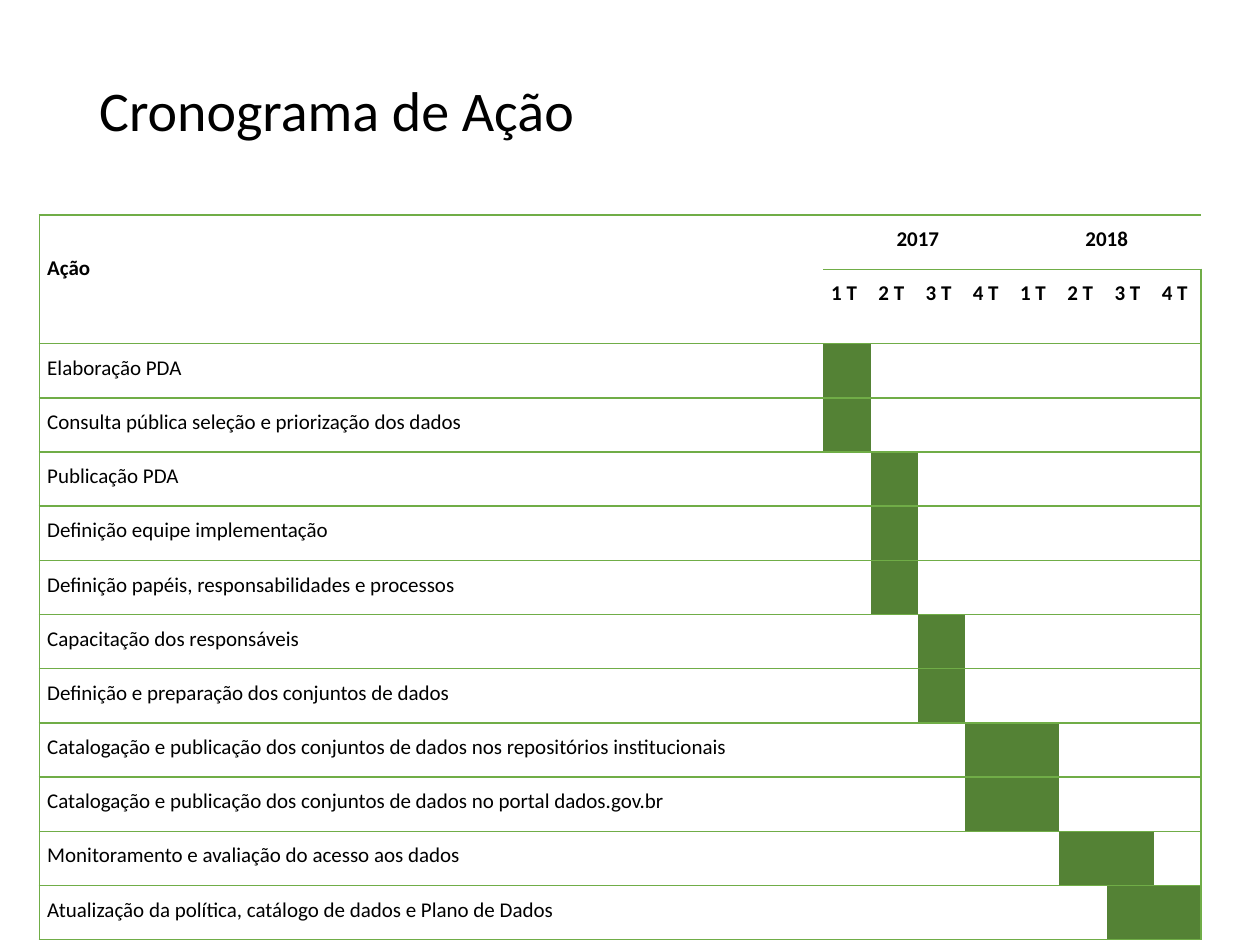
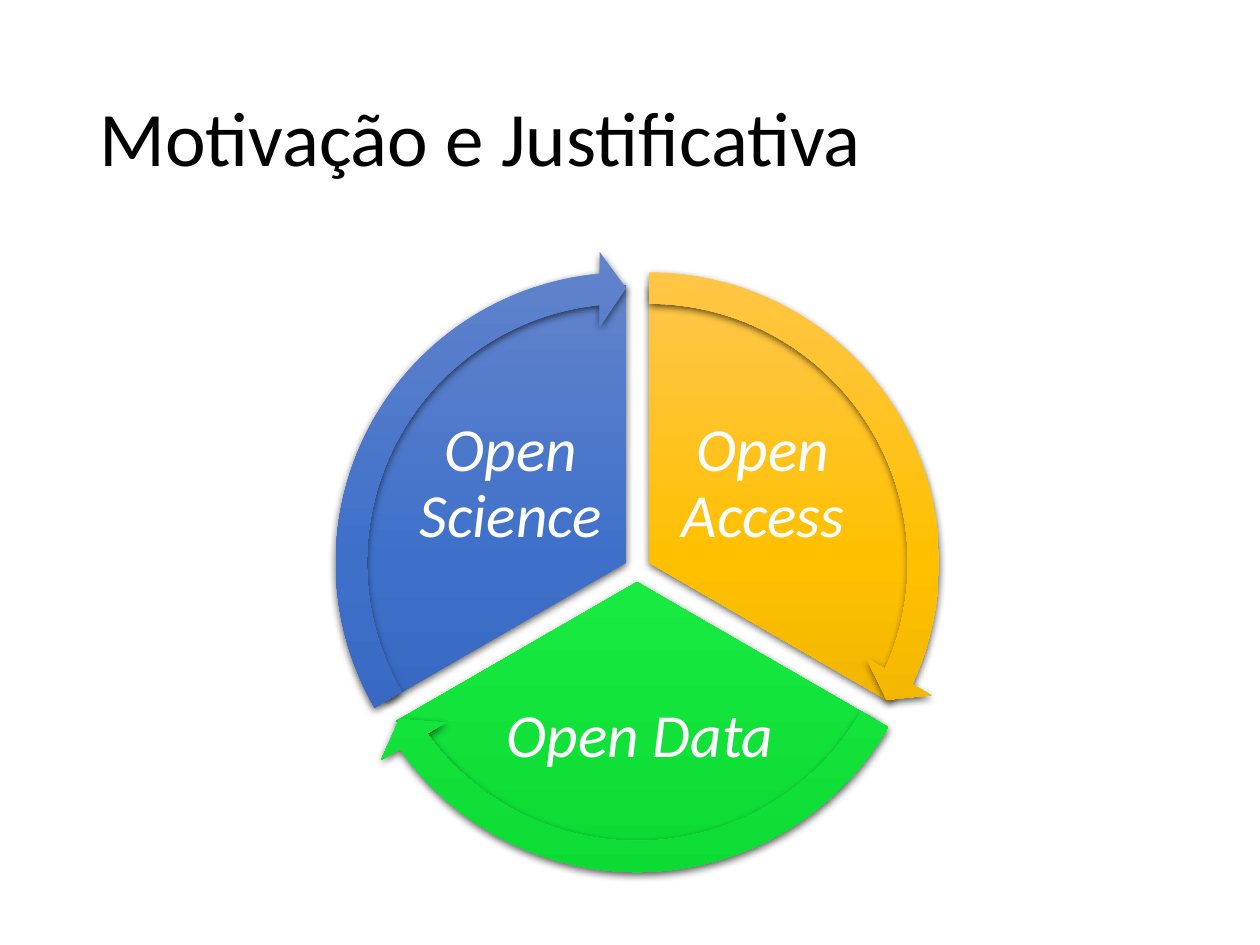
"""Build a two-slide deck: an action schedule table and an open-science cycle."""
from copy import deepcopy
from dataclasses import dataclass

from lxml import etree
from pptx import Presentation
from pptx import util as u
from pptx.dml.color import RGBColor
from pptx.enum import shapes, text
from pptx.oxml import ns

Pt = u.Pt
FONT = "Calibri"
BLACK = RGBColor(0x00, 0x00, 0x00)
WHITE = RGBColor(0xFF, 0xFF, 0xFF)
GREEN_LINE = RGBColor(0x70, 0xAD, 0x47)
GREEN_BAR = RGBColor(0x54, 0x82, 0x35)
ORANGE = (RGBColor(0xFF, 0xC6, 0x4B), RGBColor(0xFF, 0xC0, 0x00), RGBColor(0xE3, 0xAB, 0x00))
LIME = (RGBColor(0x51, 0xE6, 0x63), RGBColor(0x19, 0xEA, 0x42), RGBColor(0x0C, 0xDB, 0x34))
BLUE = (RGBColor(0x61, 0x83, 0xCB), RGBColor(0x3E, 0x70, 0xCA), RGBColor(0x30, 0x62, 0xBB))

NO_STYLE = "{2D5ABB26-0587-4C30-8999-92F81FD0307C}"
QUARTERS = 8
HEADER_ROWS = 2
CELL_MARGIN = 4.5
ROW_HEIGHT = 30.95
PIE_SIZE = 317.5
ARROW_SIZE = 356.4


@dataclass
class Action:
    name: str
    first: int
    count: int = 1


@dataclass
class Sector:
    label: str
    colors: tuple
    center: tuple
    start: float
    end: float
    arrow_start: float
    arrow_end: float
    label_box: tuple


ACTIONS = [
    Action("Elaboração PDA", 1),
    Action("Consulta pública seleção e priorização dos dados", 1),
    Action("Publicação PDA", 2),
    Action("Definição equipe implementação", 2),
    Action("Definição papéis, responsabilidades e processos", 2),
    Action("Capacitação dos responsáveis", 3),
    Action("Definição e preparação dos conjuntos de dados", 3),
    Action("Catalogação e publicação dos conjuntos de dados nos repositórios institucionais", 4, 2),
    Action("Catalogação e publicação dos conjuntos de dados no portal dados.gov.br", 4, 2),
    Action("Monitoramento e avaliação do acesso aos dados", 6, 2),
    Action("Atualização da política, catálogo de dados e Plano de Dados", 7, 2),
]

SECTORS = [
    Sector("Open Access", ORANGE, (370.9, 321.5), 162, 18, 161.99, 14.72, (379.5, 229.7, 113, 94.3)),
    Sector("Open Data", LIME, (364, 332.6), 18, 90, 18, 86.72, (280.8, 380.2, 170, 82.8)),
    Sector("Open Science", BLUE, (357.6, 321.5), 90, 162, 90, 158.73, (235.5, 229.7, 113, 94.3)),
]


def add_run(p, words: str, size: float, color: RGBColor, bold: bool = False, italic: bool = False) -> None:
    r = p.add_run()
    r.text = words
    r.font.name = FONT
    r.font.size = Pt(size)
    r.font.color.rgb = color
    r.font.bold = bold
    r.font.italic = italic


def add_titled_slide(prs, title: str, size: float, height: float):
    s = prs.slides.add_slide(prs.slide_layouts[5])
    sp = s.shapes.title
    sp.left, sp.top, sp.width, sp.height = Pt(49.5), Pt(28.8), Pt(621), Pt(height)
    tf = sp.text_frame
    tf.auto_size = text.MSO_AUTO_SIZE.NONE
    tf.vertical_anchor = text.MSO_ANCHOR.MIDDLE
    p = tf.paragraphs[0]
    p.alignment = text.PP_ALIGN.LEFT
    p.line_spacing = 0.9
    add_run(p, title, size, BLACK)
    return s


def set_borders(cell, sides: str) -> None:
    tc_pr = cell._tc.get_or_add_tcPr()
    for side in "LRTB":
        ln = etree.SubElement(tc_pr, ns.qn(f"a:ln{side}"), w=str(Pt(1)))
        if side in sides:
            fill = etree.SubElement(ln, ns.qn("a:solidFill"))
            etree.SubElement(fill, ns.qn("a:srgbClr"), val=str(GREEN_LINE))
        else:
            ln.set("w", "0")
            etree.SubElement(ln, ns.qn("a:noFill"))


def write_cell(cell, words: str, bold: bool = False, centered: bool = False) -> None:
    p = cell.text_frame.paragraphs[0]
    p.line_spacing = 1.15
    p.alignment = text.PP_ALIGN.CENTER if centered else text.PP_ALIGN.LEFT
    add_run(p, words, 12, BLACK, bold=bold)


def format_cell(table, row: int, col: int) -> None:
    cell = table.cell(row, col)
    cell.margin_left = cell.margin_right = Pt(CELL_MARGIN)
    cell.margin_top = cell.margin_bottom = Pt(CELL_MARGIN)
    sides = "B" if (row, col) == (1, 0) else "TB"
    if col == 0:
        sides += "L"
    if col == QUARTERS:
        sides += "R"
    set_borders(cell, sides)
    cell.fill.solid()
    cell.fill.fore_color.rgb = WHITE


def add_schedule(s) -> None:
    rows = HEADER_ROWS + len(ACTIONS)
    frame = s.shapes.add_table(rows, QUARTERS + 1, Pt(22.5), Pt(123), Pt(664), Pt(rows * ROW_HEIGHT))
    table = frame.table
    table._tbl.tblPr.find(ns.qn("a:tableStyleId")).text = NO_STYLE
    table.first_row = table.horz_banding = False
    for i, col in enumerate(table.columns):
        col.width = Pt(27 if i else 448)
    for i, row in enumerate(table.rows):
        row.height = Pt(42.5 if i == 1 else ROW_HEIGHT)
        for j in range(QUARTERS + 1):
            format_cell(table, i, j)

    heading = table.cell(0, 0)
    heading.merge(table.cell(1, 0))
    heading.margin_top = Pt(21)
    write_cell(heading, "Ação", bold=True)
    for year, col in (("2017", 1), ("2018", 5)):
        table.cell(0, col).merge(table.cell(0, col + 3))
        write_cell(table.cell(0, col), year, bold=True, centered=True)
    for q in range(QUARTERS):
        write_cell(table.cell(1, q + 1), f"{q % 4 + 1} T", bold=True)

    for i, action in enumerate(ACTIONS, HEADER_ROWS):
        write_cell(table.cell(i, 0), action.name)
        for col in range(action.first, action.first + action.count):
            table.cell(i, col).fill.fore_color.rgb = GREEN_BAR


def add_shadow(sp) -> None:
    sp.shadow.inherit = False
    effects = sp._element.spPr.find(ns.qn("a:effectLst"))
    shadow = etree.SubElement(effects, ns.qn("a:outerShdw"), blurRad=str(Pt(4.5)), dist=str(Pt(1.5)),
                              dir="5400000", algn="ctr", rotWithShape="0")
    color = etree.SubElement(shadow, ns.qn("a:srgbClr"), val=str(BLACK))
    etree.SubElement(color, ns.qn("a:alpha"), val="63000")


def fill_gradient(sp, colors: tuple) -> None:
    sp.fill.gradient()
    sp.fill.gradient_angle = 270
    stop_list = sp._element.spPr.find(".//" + ns.qn("a:gsLst"))
    stop_list.append(deepcopy(stop_list[0]))
    for stop, color, position in zip(sp.fill.gradient_stops, colors, (0, 0.5, 1)):
        stop.color.rgb = color
        stop.position = position


def add_round(group, kind, sector: Sector, size: float, adjustments: tuple) -> None:
    x, y = sector.center
    sp = group.shapes.add_shape(kind, Pt(x - size / 2), Pt(y - size / 2), Pt(size), Pt(size))
    for i, value in enumerate(adjustments):
        sp.adjustments[i] = value
    fill_gradient(sp, sector.colors)
    sp.line.fill.background()
    add_shadow(sp)


def add_label(group, sector: Sector) -> None:
    tf = group.shapes.add_textbox(*map(Pt, sector.label_box)).text_frame
    tf.word_wrap = True
    tf.vertical_anchor = text.MSO_ANCHOR.MIDDLE
    tf.margin_left = tf.margin_right = tf.margin_top = tf.margin_bottom = Pt(3.5)
    p = tf.paragraphs[0]
    p.alignment = text.PP_ALIGN.CENTER
    p.line_spacing = 0.9
    add_run(p, sector.label, 35, WHITE, italic=True)


def add_cycle(s) -> None:
    group = s.shapes.add_group_shape()
    for sector in SECTORS:
        add_round(group, shapes.MSO_SHAPE.PIE, sector, PIE_SIZE, (sector.start, sector.end))
        add_label(group, sector)
    for sector in SECTORS:
        add_round(group, shapes.MSO_SHAPE.CIRCULAR_ARROW, sector, ARROW_SIZE,
                  (0.05, 3.28, sector.arrow_end, sector.arrow_start, 0.06))


def main() -> None:
    prs = Presentation()
    prs.slide_width, prs.slide_height = Pt(720), Pt(540)
    add_schedule(add_titled_slide(prs, "Cronograma de Ação", 32, 72))
    add_cycle(add_titled_slide(prs, "Motivação e Justificativa", 44, 104.4))
    prs.save("out.pptx")


if __name__ == "__main__":
    main()
